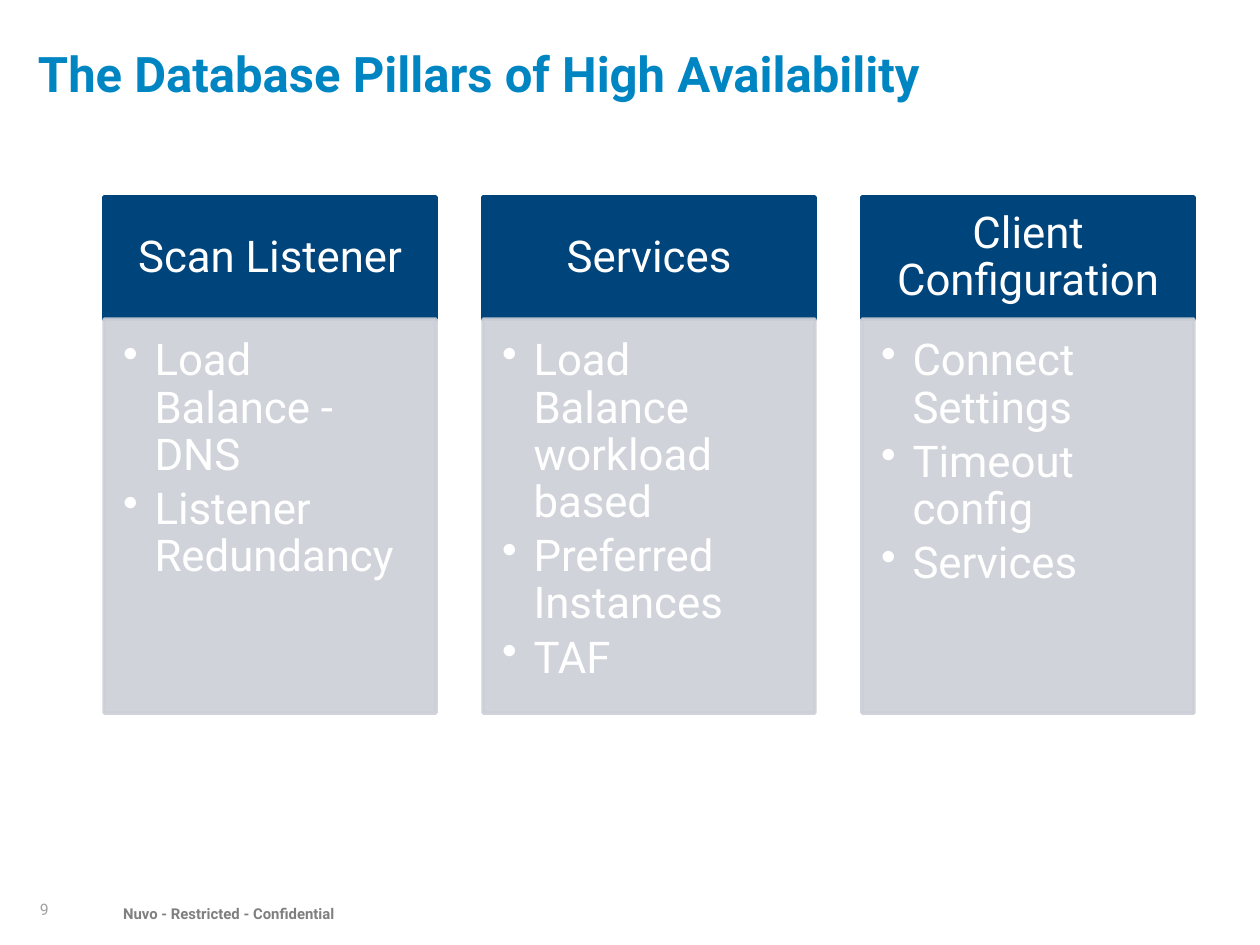
from dataclasses import dataclass

from pptx import Presentation
from pptx.dml.color import RGBColor
from pptx.enum.shapes import MSO_SHAPE
from pptx.enum.text import MSO_ANCHOR, MSO_AUTO_SIZE, PP_ALIGN
from pptx.oxml.ns import qn
from pptx.oxml.xmlchemy import OxmlElement
from pptx.slide import Slide
from pptx.util import Emu, Inches, Pt


def px(length):
    return Emu(round(length * 914400 / 126))


def color(value):
    return RGBColor.from_string(value)


@dataclass
class Deck:
    slide: Slide
    font: str = "Roboto"
    blue: str = "0085C3"
    navy: str = "00447C"
    silver: str = "CCCFD7"
    white: str = "FFFFFF"
    card_size: int = 25

    def place(self, shape, left, top, width, height):
        shape.left, shape.top = px(left), px(top)
        shape.width, shape.height = px(width), px(height)

    def frame(self, shape, insets=(0, 0, 0, 0), anchor=MSO_ANCHOR.TOP):
        frame = shape.text_frame
        frame.word_wrap = True
        frame.auto_size = MSO_AUTO_SIZE.NONE
        frame.vertical_anchor = anchor
        (frame.margin_left, frame.margin_top,
         frame.margin_right, frame.margin_bottom) = map(px, insets)
        return frame

    def add_text(self, paragraph, text, size, fill, bold=False, align=PP_ALIGN.LEFT):
        paragraph.alignment = align
        paragraph.line_spacing = 0.9
        run = paragraph.add_run()
        run.text = text
        run.font.name = self.font
        run.font.size = Pt(size)
        run.font.bold = bold
        run.font.color.rgb = color(fill)

    def title(self, text, *box):
        shape = self.slide.shapes.title
        self.place(shape, *box)
        self.add_text(self.frame(shape).paragraphs[0], text, 28, self.blue, bold=True)

    def label(self, text, box, size, fill, bold=False, anchor=MSO_ANCHOR.TOP):
        shape = self.slide.shapes.add_textbox(*map(px, box))
        frame = self.frame(shape, anchor=anchor)
        self.add_text(frame.paragraphs[0], text, size, fill, bold)

    def rectangle(self, box, fill, opacity=100):
        shape = self.slide.shapes.add_shape(MSO_SHAPE.RECTANGLE, *map(px, box))
        shape.shadow.inherit = False
        shape.fill.solid()
        shape.fill.fore_color.rgb = color(fill)
        shape.line.color.rgb = color(fill)
        shape.line.width = Pt(2)
        if opacity < 100:
            for element in shape._element.spPr.iter(qn("a:srgbClr")):
                alpha = OxmlElement("a:alpha")
                alpha.set("val", str(opacity * 1000))
                element.append(alpha)
        return shape

    def header(self, text, *box):
        shape = self.rectangle(box, self.navy)
        frame = self.frame(shape, (24, 14, 24, 14), MSO_ANCHOR.MIDDLE)
        self.add_text(frame.paragraphs[0], text, self.card_size, self.white,
                      align=PP_ALIGN.CENTER)

    def bullets(self, items, *box):
        shape = self.rectangle(box, self.silver, opacity=90)
        frame = self.frame(shape, (19, 19, 24, 28))
        for index, item in enumerate(items):
            paragraph = frame.add_paragraph() if index else frame.paragraphs[0]
            paragraph.level = 1
            properties = paragraph._p.get_or_add_pPr()
            properties.set("marL", str(Inches(0.25)))
            properties.set("indent", str(-Inches(0.25)))
            bullet = OxmlElement("a:buChar")
            bullet.set("char", "•")
            properties.append(bullet)
            paragraph.space_after = Pt(4)
            self.add_text(paragraph, item, self.card_size, self.white)


PILLARS = {
    "Scan Listener": ["Load Balance - DNS", "Listener Redundancy"],
    "Services": ["Load Balance workload based", "Preferred Instances", "TAF"],
    "Client Configuration": ["Connect Settings", "Timeout config", "Services"],
}


def main():
    presentation = Presentation()
    presentation.slide_width, presentation.slide_height = Inches(10), Inches(7.5)
    deck = Deck(presentation.slides.add_slide(presentation.slide_layouts[5]))
    deck.label("Nuvo - Restricted - Confidential", (123, 907, 400, 30), 8.5,
               "7F7F7F", bold=True)
    deck.label("9", (40, 902, 37, 16), 9, "A2A2A2", anchor=MSO_ANCHOR.MIDDLE)
    deck.title("The Database Pillars of High Availability", 38, 50, 1096, 117)

    left, top, width, gap = 104, 197, 332, 47
    header_height, list_height = 122, 394
    for column, (name, items) in enumerate(PILLARS.items()):
        x = left + column * (width + gap)
        deck.header(name, x, top, width, header_height)
        deck.bullets(items, x, top + header_height, width, list_height)
    presentation.save("out.pptx")


if __name__ == "__main__":
    main()
